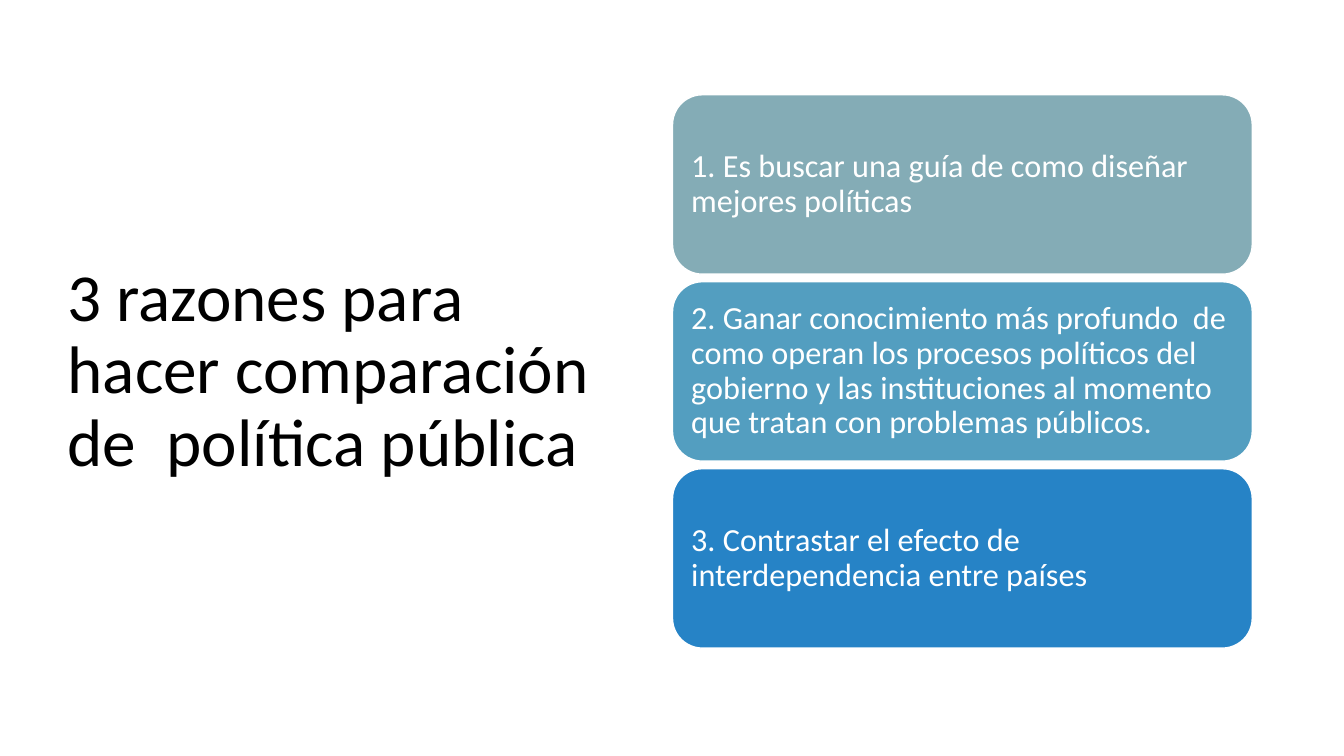
from pptx import Presentation
from pptx.dml.color import RGBColor
from pptx.enum.shapes import MSO_SHAPE
from pptx.enum.text import MSO_ANCHOR, MSO_AUTO_SIZE, PP_ALIGN
from pptx.util import Inches, Pt


def paint(color, code):
    color.rgb = RGBColor.from_string(code)


def write(shape, text, size, code):
    frame = shape.text_frame
    frame.text = text
    frame.word_wrap = True
    frame.auto_size = MSO_AUTO_SIZE.NONE
    frame.vertical_anchor = MSO_ANCHOR.MIDDLE
    para = frame.paragraphs[0]
    para.alignment = PP_ALIGN.LEFT
    para.line_spacing = 0.9
    font = para.runs[0].font
    font.name = "Calibri"
    font.size = Pt(size)
    paint(font.color, code)
    return frame


deck = Presentation()
deck.slide_width = Inches(13.33)
deck.slide_height = Inches(7.5)
slide = deck.slides.add_slide(deck.slide_layouts[5])

title = slide.shapes.title
title.left, title.top = Inches(0.57), Inches(0.68)
title.width, title.height = Inches(5.67), Inches(6.02)
write(title, "3 razones para hacer comparación de  política pública", 48, "000000")

reasons = [
    ("84ACB6", "1. Es buscar una guía de como diseñar mejores políticas"),
    ("539EC0", "2. Ganar conocimiento más profundo  de como operan los procesos "
               "políticos del gobierno y las instituciones al momento que tratan "
               "con problemas públicos."),
    ("2683C6", "3. Contrastar el efecto de interdependencia entre países"),
]
for row, (fill, text) in enumerate(reasons):
    card = slide.shapes.add_shape(
        MSO_SHAPE.ROUNDED_RECTANGLE,
        Inches(6.67), Inches(0.94 + 1.855 * row), Inches(5.75), Inches(1.78))
    card.shadow.inherit = False
    card.fill.solid()
    paint(card.fill.fore_color, fill)
    paint(card.line.color, "FFFFFF")
    card.line.width = Pt(1)
    frame = write(card, text, 23, "FFFFFF")
    frame.margin_left = frame.margin_right = Inches(0.1)
    frame.margin_top = frame.margin_bottom = Inches(0.1)

deck.save("out.pptx")
